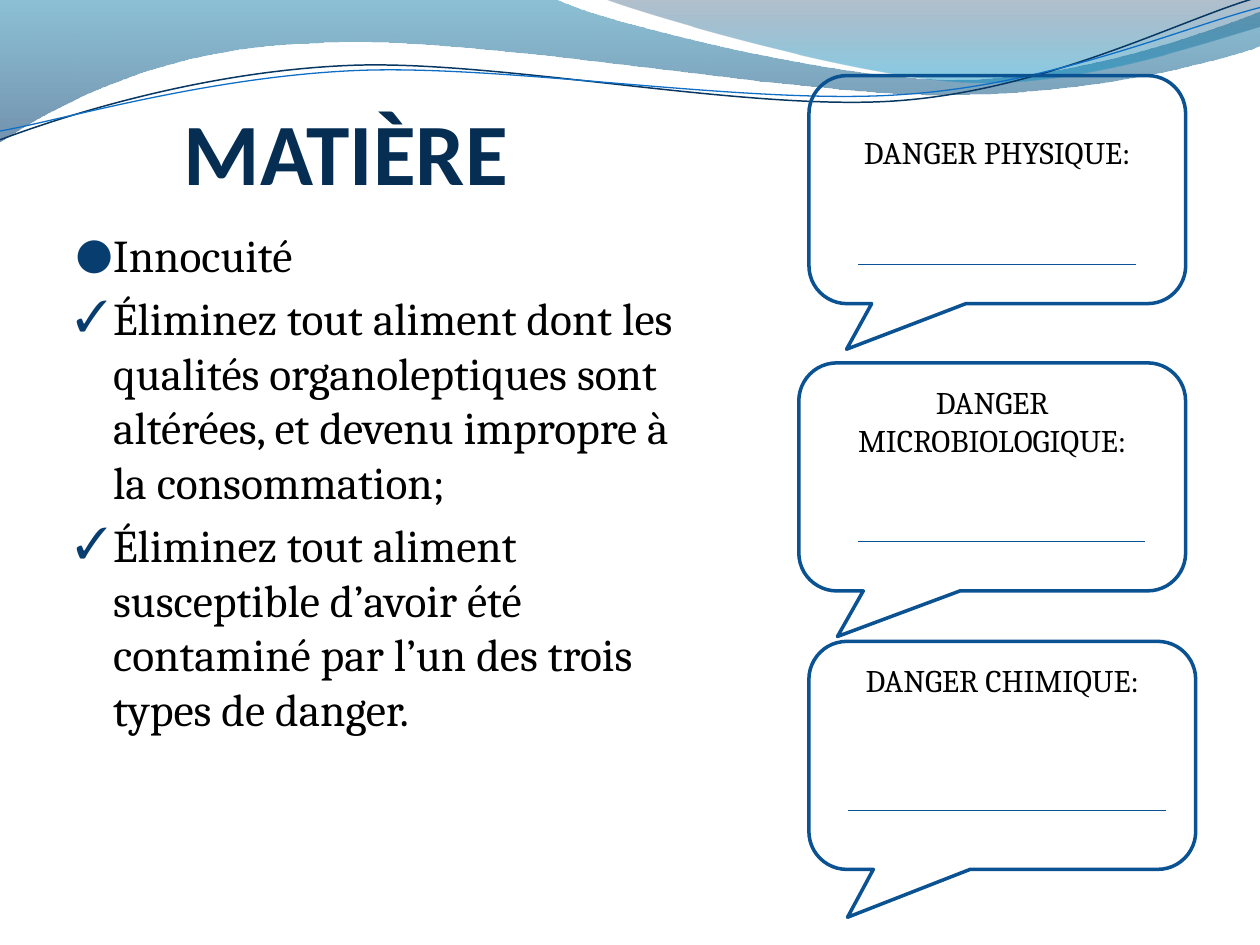
import dataclasses
import typing

import lxml.etree
import pptx
import pptx.dml.color
import pptx.enum.shapes
import pptx.enum.text
import pptx.oxml
import pptx.oxml.ns
import pptx.util

COLUMNS, ROWS = 100, 75
CELL = pptx.util.Inches(0.1)
OUTLINE = "0B5292"
BULLET = "083E6F"


@dataclasses.dataclass
class Box:
    left: float
    top: float
    width: float
    height: float

    def place(self) -> typing.List[int]:
        """Return the box in slide units."""
        return [cells(value) for value in dataclasses.astuple(self)]


@dataclasses.dataclass
class Stop:
    position: int
    color: str
    opacity: int


@dataclasses.dataclass
class Wave:
    start: typing.Tuple[float, float]
    segments: typing.List[typing.Tuple[float, ...]]
    stops: typing.Sequence[Stop] = ()
    line: str = ""
    weight: float = 0


@dataclasses.dataclass
class Callout:
    text: str
    box: Box
    tail: typing.Tuple[float, float]
    text_top: float
    rule: typing.Tuple[float, float, float]


WAVES = [
    Wave((0, 0), [(44, -0.1),
                  (47.6, 1.7, 66.4, 6.3, 75.8, 6.3),
                  (85.3, 6.3, 95.8, 2.6, 100, 0.9),
                  (100.1, 3.6),
                  (98.3, 4.4, 87, 7.6, 74.6, 7.5),
                  (62.2, 7.5, 38.2, 2.8, 25.7, 3.4),
                  (12.9, 3.6, 4.6, 8.3, -0.1, 11.3)],
         stops=[Stop(0, "0074A1", 45), Stop(100, "00396C", 55)]),
    Wave((47.9, -0.1), [(50.9, 1.1, 68.2, 6.2, 76.9, 6.5),
                        (85.6, 6.9, 96.1, 3.2, 100, 2.1),
                        (100, 0)],
         stops=[Stop(0, "002E58", 30), Stop(80, "008BBF", 45)]),
    Wave((0, 11.1), [(4.8, 9.3, 15.8, 5.7, 27.7, 5.2),
                     (39.5, 4.7, 59.3, 8.9, 71.3, 8),
                     (83.3, 7.1, 93.8, 1.5, 99.8, -0.2)],
         line="073762", weight=0.85),
    Wave((0, 10.4), [(4.7, 9.6, 16.4, 6.1, 28.3, 5.6),
                     (40.3, 5.1, 59.7, 8.4, 71.7, 7.5),
                     (83.6, 6.7, 94.1, 2.1, 100, 0.6)],
         line="0F6FC6", weight=0.75),
]

ITEMS = [
    ("●", "Innocuité"),
    ("✓", "Éliminez tout aliment dont les qualités organoleptiques sont "
          "altérées, et devenu impropre à la consommation;"),
    ("✓", "Éliminez tout aliment susceptible d’avoir été contaminé par "
          "l’un des trois types de danger."),
]

CALLOUTS = [
    Callout("DANGER PHYSIQUE:", Box(64.2, 6, 29.9, 18.1), (-0.4, 0.7), 3.7,
            (68.1, 90.2, 21)),
    Callout("DANGER MICROBIOLOGIQUE:", Box(63.4, 28.8, 30.7, 18.1), (-0.4, 0.7), 0.7,
            (68.1, 90.9, 43)),
    Callout("DANGER CHIMIQUE:", Box(64.2, 50.9, 30.7, 18.1), (-0.4, 0.71), 0.7,
            (67.3, 92.5, 64.3)),
]


def cells(count: float) -> int:
    """Convert grid cells to slide units."""
    return round(count * CELL)


def rgb(color: str) -> pptx.dml.color.RGBColor:
    """Turn a hex string into a colour."""
    return pptx.dml.color.RGBColor.from_string(color)


def add_element(parent, tag: str, **attributes):
    """Append a drawing element with its attributes."""
    return lxml.etree.SubElement(parent, pptx.oxml.ns.qn(tag), attributes)


def write(frame, text: str, *, size: float, font: str, color: str = "000000",
          bold: bool = False, align=None, before: float = 0, bullet: str = ""):
    """Write one formatted paragraph, using the empty first one if there is one."""
    paragraph = frame.paragraphs[0] if not frame.text else frame.add_paragraph()
    paragraph.alignment = align
    paragraph.space_before = pptx.util.Pt(before)
    run = paragraph.add_run()
    run.text = text
    run.font.size = pptx.util.Pt(size)
    run.font.name = font
    run.font.bold = bold
    run.font.color.rgb = rgb(color)
    if bullet:
        properties = paragraph._p.get_or_add_pPr()
        properties.set("marL", str(cells(3)))
        properties.set("indent", str(cells(-3)))
        add_element(add_element(properties, "a:buClr"), "a:srgbClr", val=BULLET)
        add_element(properties, "a:buSzPct", val="95000")
        add_element(properties, "a:buFont", typeface=font)
        add_element(properties, "a:buChar", char=bullet)


def bend(shape, segments: typing.Sequence[typing.Tuple[float, ...]]) -> None:
    """Join the three points of each curved segment into one cubic curve."""
    lines = iter(list(shape._element.iter(pptx.oxml.ns.qn("a:lnTo"))))
    for segment in segments:
        group = [next(lines) for _ in range(len(segment) // 2)]
        if len(group) == 3:
            curve = lxml.etree.Element(pptx.oxml.ns.qn("a:cubicBezTo"))
            group[0].addprevious(curve)
            for line in group:
                curve.append(line[0])
                line.getparent().remove(line)


def fill_gradient(shape, stops: typing.Sequence[Stop]) -> None:
    """Fill a shape with a translucent gradient from top to bottom."""
    shape.fill.gradient()
    gradient = shape._element.spPr.find(pptx.oxml.ns.qn("a:gradFill"))
    for child in list(gradient):
        gradient.remove(child)
    stop_list = add_element(gradient, "a:gsLst")
    for stop in stops:
        entry = add_element(stop_list, "a:gs", pos=str(stop.position * 1000))
        color = add_element(entry, "a:srgbClr", val=stop.color)
        add_element(color, "a:alpha", val=str(stop.opacity * 1000))
    add_element(gradient, "a:lin", ang="5400000", scaled="0")


def draw_wave(slide, wave: Wave) -> None:
    """Draw a filled band or an open curve."""
    builder = slide.shapes.build_freeform(*map(cells, wave.start))
    points = [(cells(x), cells(y)) for segment in wave.segments
              for x, y in zip(segment[::2], segment[1::2])]
    builder.add_line_segments(points, close=bool(wave.stops))
    shape = builder.convert_to_shape()
    bend(shape, wave.segments)
    shape.shadow.inherit = False
    if wave.stops:
        fill_gradient(shape, wave.stops)
        shape.line.fill.background()
    else:
        shape.fill.background()
        shape.line.color.rgb = rgb(wave.line)
        shape.line.width = pptx.util.Pt(wave.weight)


def add_frame(slide, box: Box):
    """Add a wrapping text box and return its text frame."""
    frame = slide.shapes.add_textbox(*box.place()).text_frame
    frame.word_wrap = True
    return frame


def draw_callout(slide, callout: Callout) -> None:
    """Draw a speech bubble with its heading."""
    kind = pptx.enum.shapes.MSO_SHAPE.ROUNDED_RECTANGULAR_CALLOUT
    shape = slide.shapes.add_shape(kind, *callout.box.place())
    shape.shadow.inherit = False
    shape.adjustments[0], shape.adjustments[1] = callout.tail
    shape.fill.background()
    shape.line.color.rgb = rgb(OUTLINE)
    shape.line.width = pptx.util.Pt(2)
    frame = shape.text_frame
    frame.word_wrap = True
    frame.vertical_anchor = pptx.enum.text.MSO_ANCHOR.TOP
    frame.margin_top = cells(callout.text_top)
    write(frame, callout.text, size=18, font="Cambria", align=pptx.enum.text.PP_ALIGN.CENTER)


def draw_rule(slide, left: float, right: float, top: float) -> None:
    """Draw the answer line of a callout."""
    kind = pptx.enum.shapes.MSO_CONNECTOR.STRAIGHT
    rule = slide.shapes.add_connector(kind, *map(cells, (left, top, right, top)))
    rule.line.color.rgb = rgb("095295")
    rule.line.width = pptx.util.Pt(0.75)
    add_element(rule._element.spPr, "a:effectLst")


def main() -> None:
    """Build the slide and save it."""
    presentation = pptx.Presentation()
    presentation.slide_width, presentation.slide_height = cells(COLUMNS), cells(ROWS)
    slide = presentation.slides.add_slide(presentation.slide_layouts[6])
    for wave in WAVES:
        draw_wave(slide, wave)
    title = add_frame(slide, Box(14.6, 3.6, 36.3, 12.5))
    title.margin_left = title.margin_right = title.margin_bottom = 0
    title.vertical_anchor = pptx.enum.text.MSO_ANCHOR.BOTTOM
    write(title, "MATIÈRE", size=50, font="Calibri", color="062E53", bold=True)
    body = add_frame(slide, Box(5, 17.5, 51.3, 53.9))
    for bullet, text in ITEMS:
        write(body, text, size=26, font="Cambria", before=5, bullet=bullet)
    for callout in CALLOUTS:
        draw_callout(slide, callout)
    for callout in CALLOUTS:
        draw_rule(slide, *callout.rule)
    presentation.save("out.pptx")


if __name__ == "__main__":
    main()
